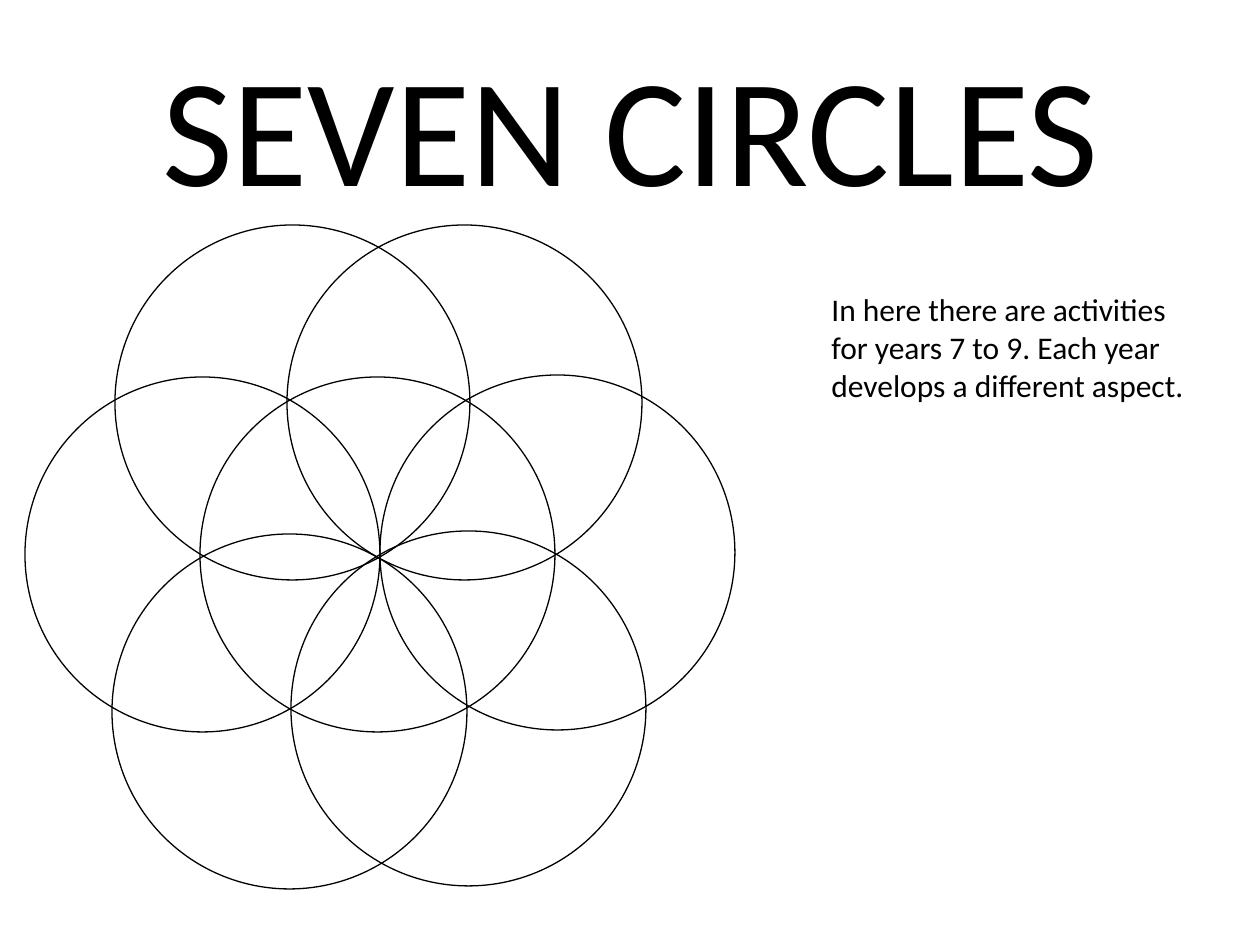
from pptx import Presentation
from pptx.dml.color import RGBColor
from pptx.enum.shapes import MSO_SHAPE
from pptx.enum.text import MSO_AUTO_SIZE, PP_ALIGN
from pptx.util import Emu, Pt

COLORS = {"ink": "000000", "paper": "FFFFFF"}
FONT = "Calibri"
SIZE = 355
SPOTS = [(175, 152), (355, 150), (262, 0), (90, 0), (0, 152), (87, 309), (266, 306)]


def px(n):
    """Turn pixels into EMU."""
    return Emu(round(n * 914400 / 126))


def color(name):
    """Look up a named colour."""
    return RGBColor.from_string(COLORS[name])


def add_rings(slide, left, top):
    """Group the seven overlapping circles from a top left corner."""
    group = slide.shapes.add_group_shape()
    for x, y in SPOTS:
        ring = group.shapes.add_shape(
            MSO_SHAPE.OVAL, px(left + x), px(top + y), px(SIZE), px(SIZE))
        ring.shadow.inherit = False
        ring.fill.background()
        ring.line.color.rgb = color("ink")
        ring.line.width = Pt(0.75)


def add_text(slide, box, text, size, align):
    """Place one wrapped paragraph in a box."""
    frame = slide.shapes.add_textbox(*map(px, box)).text_frame
    frame.word_wrap = True
    frame.auto_size = MSO_AUTO_SIZE.SHAPE_TO_FIT_TEXT
    para = frame.paragraphs[0]
    para.text = text
    para.alignment = align
    para.font.name = FONT
    para.font.size = Pt(size)
    para.font.color.rgb = color("ink")


def main():
    """Build and save the slide."""
    deck = Presentation()
    deck.slide_width, deck.slide_height = px(1260), px(945)
    slide = deck.slides.add_slide(deck.slide_layouts[6])
    slide.background.fill.solid()
    slide.background.fill.fore_color.rgb = color("paper")
    add_rings(slide, 25, 225)
    add_text(slide, (25, 26, 1211, 199), "SEVEN CIRCLES", 88, PP_ALIGN.CENTER)
    add_text(
        slide, (819, 284, 387, 127),
        "In here there are activities for years 7 to 9. "
        "Each year develops a different aspect.", 18, PP_ALIGN.LEFT)
    deck.save("out.pptx")


if __name__ == "__main__":
    main()
